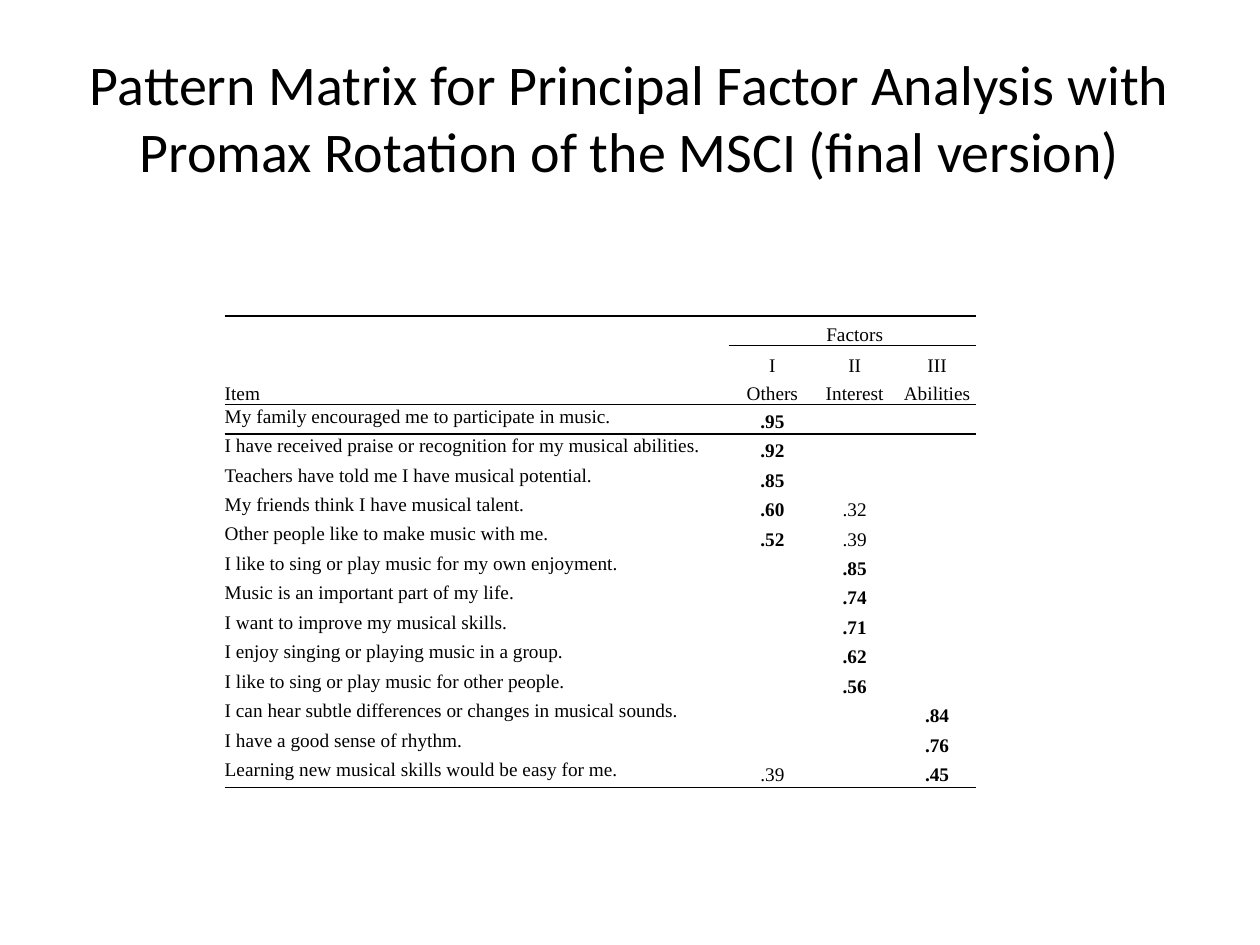
from dataclasses import dataclass

from lxml import etree
from pptx import Presentation
from pptx.dml.color import RGBColor
from pptx.enum.text import MSO_ANCHOR, PP_ALIGN
from pptx.oxml.ns import qn
from pptx.util import Cm, Pt

CENTER, LEFT = PP_ALIGN.CENTER, PP_ALIGN.LEFT
TOP, MIDDLE, BOTTOM = MSO_ANCHOR.TOP, MSO_ANCHOR.MIDDLE, MSO_ANCHOR.BOTTOM
NO_STYLE = "{2D5ABB26-0587-4C30-8999-92F81FD0307C}"


@dataclass(frozen=True)
class Theme:
    ink: RGBColor = RGBColor(0, 0, 0)
    paper: RGBColor = RGBColor(255, 255, 255)
    title_font: str = "Calibri"
    table_font: str = "Times New Roman"
    title_size: Pt = Pt(32)
    table_size: Pt = Pt(11)
    rule: Pt = Pt(1)


TITLE = ("Pattern Matrix for Principal Factor Analysis with "
         "Promax Rotation of the MSCI (final version)")
FACTORS = ["I\nOthers", "II\nInterest", "III\nAbilities"]
# Item, loadings on the three factors, index of the main factor
ITEMS = [
    ("My family encouraged me to participate in music.", [".95", "", ""], 0),
    ("I have received praise or recognition for my musical abilities.", [".92", "", ""], 0),
    ("Teachers have told me I have musical potential.", [".85", "", ""], 0),
    ("My friends think I have musical talent.", [".60", ".32", ""], 0),
    ("Other people like to make music with me.", [".52", ".39", ""], 0),
    ("I like to sing or play music for my own enjoyment.", ["", ".85", ""], 1),
    ("Music is an important part of my life.", ["", ".74", ""], 1),
    ("I want to improve my musical skills.", ["", ".71", ""], 1),
    ("I enjoy singing or playing music in a group.", ["", ".62", ""], 1),
    ("I like to sing or play music for other people.", ["", ".56", ""], 1),
    ("I can hear subtle differences or changes in musical sounds.", ["", "", ".84"], 2),
    ("I have a good sense of rhythm.", ["", "", ".76"], 2),
    ("Learning new musical skills would be easy for me.", [".39", "", ".45"], 2),
]
COL_WIDTHS = [9.68, 0.48] + [1.66] * len(FACTORS)
ROW_HEIGHT = 0.594
FIRST_FACTOR = 2

ITEM_PARA = {"alignment": LEFT, "line_spacing": 1.07, "space_after": Pt(8)}
FACTOR_PARA = {"alignment": CENTER, "line_spacing": Pt(16)}


def apply(obj, values):
    for name, value in values.items():
        setattr(obj, name, value)


class SlideBuilder:
    def __init__(self, slide, theme):
        self.slide, self.theme = slide, theme

    def run(self, p, text, font, size, bold=False):
        r = p.add_run()
        r.text = text
        apply(r.font, {"name": font, "size": size, "bold": bold})
        r.font.color.rgb = self.theme.ink

    def title(self, text, left, top, width, height):
        sp = self.slide.shapes.add_textbox(Cm(left), Cm(top), Cm(width), Cm(height))
        tf = sp.text_frame
        apply(tf, {"word_wrap": True, "vertical_anchor": MIDDLE})
        p = tf.paragraphs[0]
        p.alignment = CENTER
        self.run(p, text, self.theme.title_font, self.theme.title_size)

    def table(self, left, top, widths, heights):
        frame = self.slide.shapes.add_table(
            len(heights), len(widths), Cm(left), Cm(top), Cm(sum(widths)), Cm(sum(heights)))
        table = frame.table
        apply(table, {"first_row": False, "horz_banding": False})
        table._tbl.tblPr.find(qn("a:tableStyleId")).text = NO_STYLE
        for col, width in zip(table.columns, widths):
            col.width = Cm(width)
        for row, height in zip(table.rows, heights):
            row.height = Cm(height)
        return table

    def cell(self, cell, text="", para=FACTOR_PARA, anchor=TOP, bold=False):
        apply(cell, {"margin_left": 0, "margin_right": 0, "margin_top": 0,
                     "margin_bottom": 0, "vertical_anchor": anchor})
        cell.fill.solid()
        cell.fill.fore_color.rgb = self.theme.paper
        tf = cell.text_frame
        for i, line in enumerate(text.split("\n")):
            p = tf.add_paragraph() if i else tf.paragraphs[0]
            apply(p, para)
            if para is FACTOR_PARA:
                p._p.get_or_add_pPr().set("marL", str(Cm(0.1)))
            if line:
                self.run(p, line, self.theme.table_font, self.theme.table_size, bold)
            else:  # keeps an empty cell as low as its row
                end = etree.SubElement(p._p, qn("a:endParaRPr"))
                end.set("sz", str(int(self.theme.table_size.pt * 100)))

    def rule(self, cells, side):
        """Draw a border along one side: T for top, B for bottom."""
        for cell in cells:
            tc_pr = cell._tc.get_or_add_tcPr()
            ln = etree.Element(qn(f"a:ln{side}"), w=str(self.theme.rule))
            fill = etree.SubElement(ln, qn("a:solidFill"))
            etree.SubElement(fill, qn("a:srgbClr"), val=str(self.theme.ink))
            has_top = tc_pr.find(qn("a:lnT")) is not None
            tc_pr.insert(1 if side == "B" and has_top else 0, ln)


def main():
    prs = Presentation()
    prs.slide_width, prs.slide_height = Cm(25.4), Cm(19.05)
    s = SlideBuilder(prs.slides.add_slide(prs.slide_layouts[6]), Theme())

    s.title(TITLE, 1.27, 0.76, 22.86, 3.18)

    # Table grid; the second header row holds two lines
    heights = [ROW_HEIGHT, 2 * ROW_HEIGHT] + [ROW_HEIGHT] * len(ITEMS)
    table = s.table(4.53, 6.37, COL_WIDTHS, heights)
    rows = [list(row.cells) for row in table.rows]

    # Header
    rows[0][FIRST_FACTOR].merge(rows[0][-1])
    for cell, text in zip(rows[0], ["", "", "Factors", "", ""]):
        s.cell(cell, text, anchor=BOTTOM)
    s.cell(rows[1][0], "Item", ITEM_PARA, BOTTOM)
    for cell, text in zip(rows[1][1:], [""] + FACTORS):
        s.cell(cell, text, anchor=BOTTOM)

    # Items and loadings
    for row, (item, loadings, main_factor) in zip(rows[2:], ITEMS):
        s.cell(row[0], item, ITEM_PARA)
        s.cell(row[1])
        for i, (cell, value) in enumerate(zip(row[FIRST_FACTOR:], loadings)):
            s.cell(cell, value, bold=i == main_factor)

    # Rules
    s.rule(rows[0], "T")
    s.rule(rows[0][FIRST_FACTOR:], "B")
    s.rule(rows[1][FIRST_FACTOR:], "T")
    s.rule(rows[1], "B")
    s.rule(rows[2], "T")
    s.rule(rows[-1], "B")

    prs.save("out.pptx")


if __name__ == "__main__":
    main()
